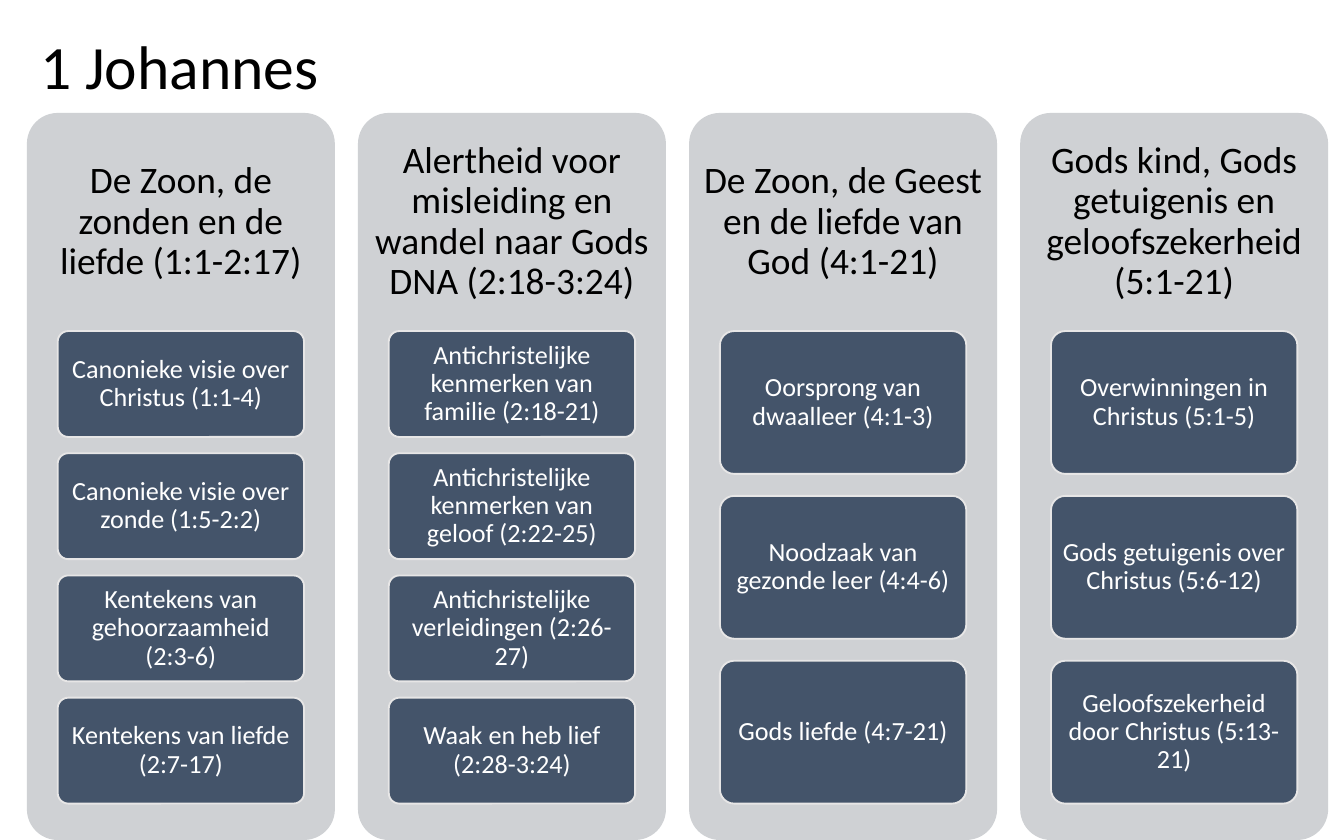
from dataclasses import dataclass

from pptx import Presentation
from pptx.dml.color import RGBColor
from pptx.enum import shapes, text
from pptx.util import Pt


@dataclass(frozen=True)
class Theme:
    font: str = "Calibri"
    ink: RGBColor = RGBColor(0x00, 0x00, 0x00)
    white: RGBColor = RGBColor(0xFF, 0xFF, 0xFF)
    panel: RGBColor = RGBColor(0xCF, 0xD1, 0xD4)
    card: RGBColor = RGBColor(0x44, 0x54, 0x6A)
    card_edge: RGBColor = RGBColor(0xE7, 0xE6, 0xE6)
    title_size: int = 33
    heading_size: int = 20
    card_size: int = 14


theme = Theme()

sections = [
    ("De Zoon, de zonden en de liefde (1:1-2:17)", [
        "Canonieke visie over Christus (1:1-4)",
        "Canonieke visie over zonde (1:5-2:2)",
        "Kentekens van gehoorzaamheid (2:3-6)",
        "Kentekens van liefde (2:7-17)",
    ]),
    ("Alertheid voor misleiding en wandel naar Gods DNA (2:18-3:24)", [
        "Antichristelijke kenmerken van familie (2:18-21)",
        "Antichristelijke kenmerken van geloof (2:22-25)",
        "Antichristelijke verleidingen (2:26-27)",
        "Waak en heb lief (2:28-3:24)",
    ]),
    ("De Zoon, de Geest en de liefde van God (4:1-21)", [
        "Oorsprong van dwaalleer (4:1-3)",
        "Noodzaak van gezonde leer (4:4-6)",
        "Gods liefde (4:7-21)",
    ]),
    ("Gods kind, Gods getuigenis en geloofszekerheid (5:1-21)", [
        "Overwinningen in Christus (5:1-5)",
        "Gods getuigenis over Christus (5:6-12)",
        "Geloofszekerheid door Christus (5:13-21)",
    ]),
]

prs = Presentation()
prs.slide_width, prs.slide_height = Pt(720), Pt(450)
slide = prs.slides.add_slide(prs.slide_layouts[6])


def rounded_box(left, top, width, height, fill):
    box = slide.shapes.add_shape(
        shapes.MSO_SHAPE.ROUNDED_RECTANGLE, Pt(left), Pt(top), Pt(width), Pt(height))
    box.adjustments[0] = 0.1
    box.shadow.inherit = False
    box.fill.solid()
    box.fill.fore_color.rgb = fill
    box.line.fill.background()
    return box


def write(box, words, size, color, align, inset_x, inset_y):
    frame = box.text_frame
    frame.word_wrap = True
    frame.vertical_anchor = text.MSO_ANCHOR.MIDDLE
    frame.margin_left = frame.margin_right = Pt(inset_x)
    frame.margin_top = frame.margin_bottom = Pt(inset_y)
    paragraph = frame.paragraphs[0]
    paragraph.text = words
    paragraph.alignment = align
    paragraph.line_spacing = 0.9
    paragraph.font.name = theme.font
    paragraph.font.size = Pt(size)
    paragraph.font.color.rgb = color


title = slide.shapes.add_textbox(Pt(14.4), Pt(2.2), Pt(669.6), Pt(69.8))
write(title, "1 Johannes", theme.title_size, theme.ink, text.PP_ALIGN.LEFT, 7.2, 3.6)

panel_left, panel_top = 14.4, 60.5
panel_width, panel_height = 165, 389.5
panel_pitch = panel_width * 1.075
heading_height = panel_height * 0.3
card_width = panel_width * 0.8
stack_height = panel_height * 0.65
gap_ratio = 2 / 13  # gap between cards, as a share of card height

for column, (heading, topics) in enumerate(sections):
    left = panel_left + column * panel_pitch
    rounded_box(left, panel_top, panel_width, panel_height, theme.panel)
    heading_box = slide.shapes.add_textbox(
        Pt(left), Pt(panel_top), Pt(panel_width), Pt(heading_height))
    write(heading_box, heading, theme.heading_size, theme.ink,
          text.PP_ALIGN.CENTER, 6, 6)

    card_height = stack_height / (len(topics) + (len(topics) - 1) * gap_ratio)
    card_left = left + (panel_width - card_width) / 2
    for row, topic in enumerate(topics):
        card_top = panel_top + heading_height + row * card_height * (1 + gap_ratio)
        card = rounded_box(card_left, card_top, card_width, card_height, theme.card)
        card.line.color.rgb = theme.card_edge
        card.line.width = Pt(1)
        write(card, topic, theme.card_size, theme.white,
              text.PP_ALIGN.CENTER, 2.8, 2.1)

prs.save("out.pptx")
